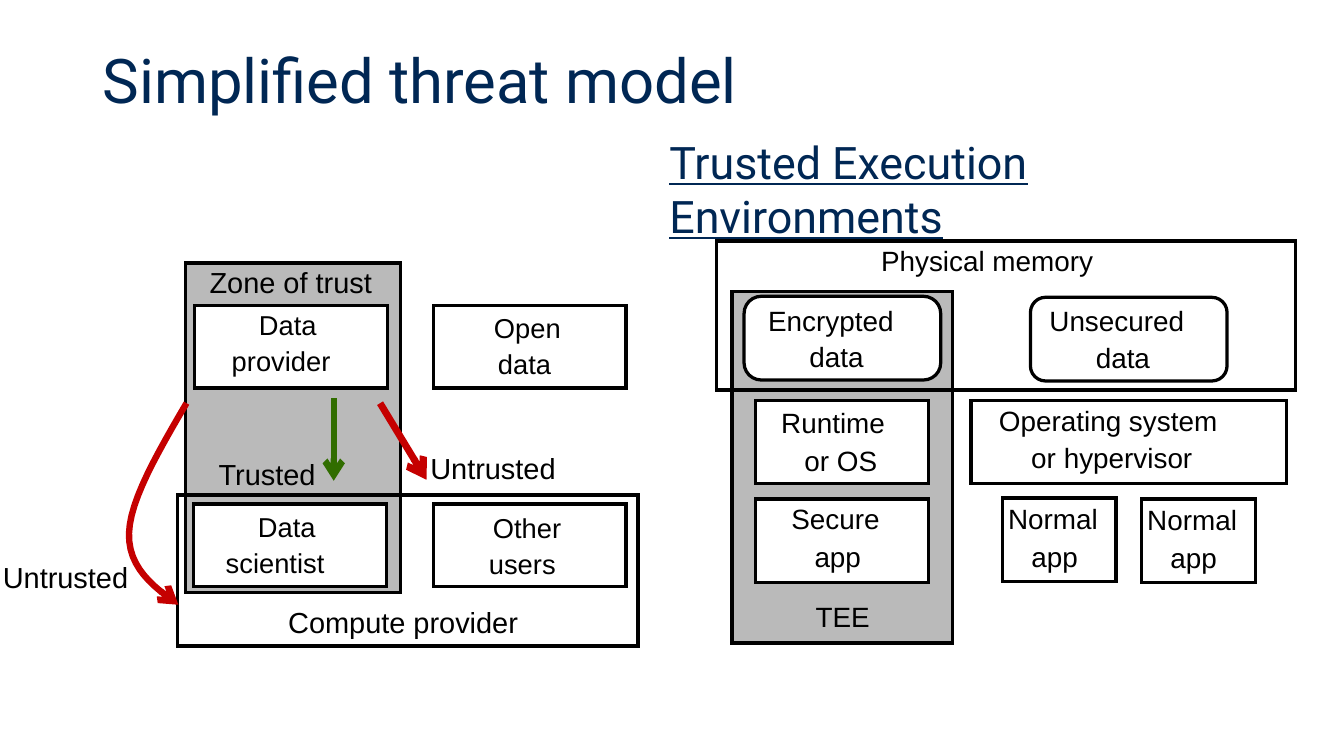
from dataclasses import dataclass

from lxml import etree
from pptx import Presentation
from pptx import util as u
from pptx.dml.color import RGBColor
from pptx.enum import shapes, text
from pptx.oxml import ns

BLACK, WHITE, GRAY = "000000", "FFFFFF", "BABABA"
NAVY, RED, GREEN = "002754", "C50000", "316D00"
RECT = shapes.MSO_SHAPE.RECTANGLE
ROUND = shapes.MSO_SHAPE.ROUNDED_RECTANGLE


@dataclass
class Label:
    words: str
    x: float
    y: float
    w: float
    size: float
    h: float = 0.46
    font: str = "Arial"
    color: str = BLACK
    underline: bool = False
    spacing: float = 1.0
    anchor: text.MSO_ANCHOR = text.MSO_ANCHOR.TOP


@dataclass
class Box:
    x: float
    y: float
    w: float
    h: float
    line: float
    fill: str | None = WHITE
    kind: shapes.MSO_SHAPE = RECT
    labels: tuple[Label, ...] = ()
    radius: float = 0.0


@dataclass
class Arrow:
    points: list[tuple[float, float]]
    color: str
    width: float


def rgb(value: str) -> RGBColor:
    return RGBColor.from_string(value)


def add_ln_child(sp, tag: str, **attrs: str) -> None:
    etree.SubElement(sp.line._get_or_add_ln(), ns.qn(tag), attrs)


def draw_label(s, label: Label) -> None:
    sp = s.shapes.add_textbox(*map(u.Inches, (label.x, label.y, label.w, label.h)))
    tf = sp.text_frame
    tf.word_wrap = True
    tf.vertical_anchor = label.anchor
    p = tf.paragraphs[0]
    p.line_spacing = label.spacing
    r = p.add_run()
    r.text = label.words
    r.font.name = label.font
    r.font.size = u.Pt(label.size)
    r.font.color.rgb = rgb(label.color)
    if label.underline:
        r.font.underline = True


def draw_box(s, box: Box) -> None:
    sp = s.shapes.add_shape(box.kind, *map(u.Inches, (box.x, box.y, box.w, box.h)))
    sp.shadow.inherit = False
    if box.kind == ROUND:
        sp.adjustments[0] = box.radius / box.h
    if box.fill:
        sp.fill.solid()
        sp.fill.fore_color.rgb = rgb(box.fill)
    else:
        sp.fill.background()
    sp.line.color.rgb = rgb(BLACK)
    sp.line.width = u.Pt(box.line)
    add_ln_child(sp, "a:miter", lim="800000")
    for label in box.labels:
        draw_label(s, label)


def draw_arrow(s, arrow: Arrow) -> None:
    points = [(u.Inches(x), u.Inches(y)) for x, y in arrow.points]
    if len(points) == 2:
        sp = s.shapes.add_connector(shapes.MSO_CONNECTOR.STRAIGHT, *points[0], *points[1])
        etree.SubElement(sp._element.spPr, ns.qn("a:effectLst"))
    else:
        builder = s.shapes.build_freeform(*points[0])
        builder.add_line_segments(points[1:], close=False)
        sp = builder.convert_to_shape()
        sp.shadow.inherit = False
        sp.fill.background()
    sp.line.color.rgb = rgb(arrow.color)
    sp.line.width = u.Pt(arrow.width)
    add_ln_child(sp, "a:tailEnd", type="arrow")


def bezier(*ctrl: tuple[float, float], steps: int = 12) -> list[tuple[float, float]]:
    """Points along a cubic curve, without its start."""
    curve = []
    for i in range(1, steps + 1):
        t = i / steps
        weights = ((1 - t) ** 3, 3 * t * (1 - t) ** 2, 3 * t * t * (1 - t), t ** 3)
        curve.append(tuple(sum(k * c[axis] for k, c in zip(weights, ctrl)) for axis in (0, 1)))
    return curve


def role(x: float, y: float, top: Label, bottom: Label) -> Box:
    """A party in the threat model."""
    return Box(x, y, 1.91, 0.82, 2.29, labels=(top, bottom))


def party(words: str, x: float, y: float, w: float) -> Label:
    return Label(words, x, y, w, 19.5)


def caption(words: str, x: float, y: float, w: float) -> Label:
    return Label(words, x, y, w, 20.7)


def part(words: str, x: float, y: float, w: float) -> Label:
    return Label(words, x, y, w, 19.9)


def layer(x: float, y: float, w: float, *labels: Label, radius: float = 0) -> Box:
    """A memory, system or app block in the execution stack."""
    return Box(x, y, w, 0.83, 2.33, WHITE, ROUND if radius else RECT, labels, radius)


TITLE = Label("Simplified threat model", 0.92, 0.4, 11.5, 44, 0.86, "Roboto", NAVY,
              spacing=0.9, anchor=text.MSO_ANCHOR.MIDDLE)
SUBTITLE = Label("Trusted Execution Environments", 6.54, 1.29, 6.5, 32, 0.64, "Roboto", NAVY, True)

THREAT_BOXES = [
    Box(1.84, 2.61, 2.13, 3.27, 2.25, GRAY),
    role(1.93, 3.03, party("Data", 2.47, 3.01, 0.83), party("provider", 2.2, 3.37, 1.38)),
    Box(1.76, 4.91, 4.57, 1.5, 2.52, None),
    role(1.92, 5, party("Data", 2.46, 5.01, 0.83), party("scientist", 2.14, 5.37, 1.47)),
    role(4.3, 5, party("Other", 4.79, 5.02, 0.92), party("users", 4.75, 5.38, 1.01)),
    role(4.3, 3.03, party("Open", 4.8, 3.04, 0.92), party("data", 4.84, 3.4, 0.83)),
]
THREAT_CAPTIONS = [
    caption("Trusted", 2.07, 4.48, 1.21),
    caption("Untrusted", 4.17, 4.42, 1.49),
    caption("Untrusted", -0.07, 5.5, 1.49),
    caption("Zone of trust", 1.98, 2.58, 1.85),
    caption("Compute provider", 2.76, 5.95, 2.55),
]
BYPASS = [(1.85, 4), *bezier((1.85, 4), (1.57, 4.48), (1.29, 4.96), (1.28, 5.29)),
          *bezier((1.28, 5.29), (1.27, 5.63), (1.52, 5.82), (1.77, 6))]
ARROWS = [
    Arrow([(3.31, 3.95), (3.31, 4.77)], GREEN, 4.56),
    Arrow([(3.77, 4), (4.23, 4.76)], RED, 5),
    Arrow(BYPASS, RED, 4.55),
]
STACK_BOXES = [
    Box(7.26, 2.89, 2.19, 3.49, 2.33, GRAY, labels=(part("TEE", 7.99, 5.9, 0.75),)),
    layer(7.49, 4.95, 1.72, part("Secure", 7.75, 4.93, 1.21), part("app", 7.98, 5.3, 0.75)),
    layer(9.63, 3.97, 3.13, part("Operating system", 9.81, 3.96, 2.77),
          part("or hypervisor", 10.13, 4.32, 2.13)),
    layer(7.38, 2.94, 1.95, part("Encrypted", 7.52, 2.96, 1.67),
          part("data", 7.93, 3.32, 0.84), radius=0.17),
    layer(10.22, 2.95, 1.95, part("Unsecured", 10.31, 2.96, 1.76),
          part("data", 10.77, 3.33, 0.84), radius=0.15),
    layer(7.49, 3.97, 1.72, part("Runtime", 7.65, 3.98, 1.4), part("or OS", 7.88, 4.35, 0.94)),
    *(layer(x, y, 1.13, part("Normal", x - 0.04, y - 0.01, 1.21),
            part("app", x + 0.19, y + 0.36, 0.75)) for x, y in ((11.32, 4.95), (9.94, 4.94))),
    Box(7.11, 2.39, 5.74, 1.48, 2.33, None, labels=(part("Physical memory", 8.64, 2.37, 2.77),)),
]


def main() -> None:
    prs = Presentation()
    prs.slide_width, prs.slide_height = u.Inches(13.33), u.Inches(7.5)
    s = prs.slides.add_slide(prs.slide_layouts[6])
    draw_label(s, TITLE)

    # Threat model on the left
    for box in THREAT_BOXES:
        draw_box(s, box)
    for arrow in ARROWS:
        draw_arrow(s, arrow)
    for label in THREAT_CAPTIONS:
        draw_label(s, label)

    # Execution environment on the right
    for box in STACK_BOXES:
        draw_box(s, box)
    draw_label(s, SUBTITLE)
    prs.save("out.pptx")


if __name__ == "__main__":
    main()
